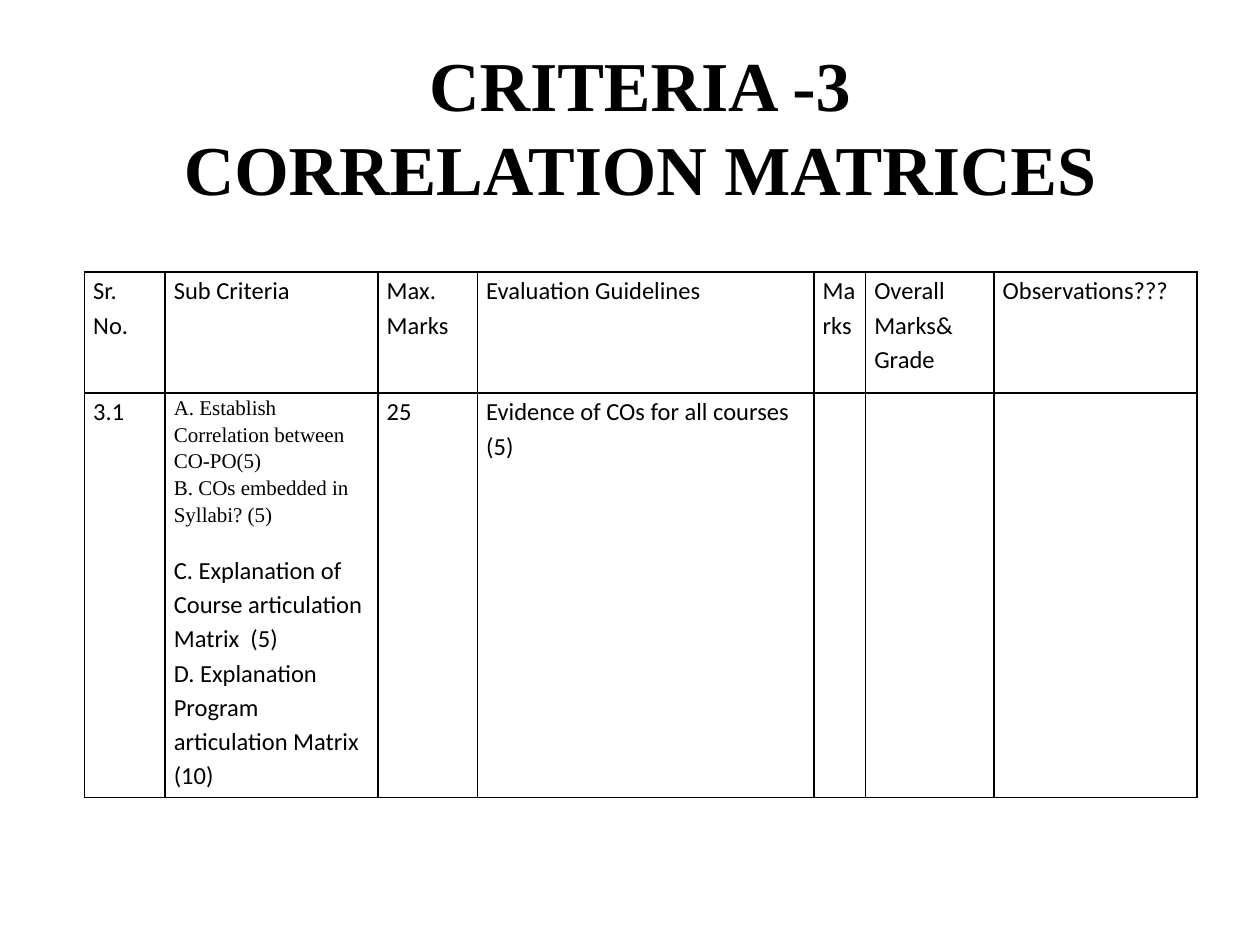
from lxml import etree
from pptx import Presentation
from pptx.dml.color import RGBColor as RGB
from pptx.enum.text import MSO_ANCHOR as Anchor, MSO_AUTO_SIZE as Fit, PP_ALIGN as Align
from pptx.oxml.ns import qn
from pptx.util import Inches, Pt

HUES = {"ink": "000000", "paper": "FFFFFF"}
SANS = {"name": "Calibri", "size": Pt(14)}
SERIF = {"name": "Times New Roman", "size": Pt(12)}
HEAD = {"name": "Times New Roman", "size": Pt(40), "bold": True}


def style(font, form):
    for key, val in form.items():
        setattr(font, key, val)
    font.color.rgb = RGB.from_string(HUES["ink"])


def frame(cell):
    """Draw a thin line on all four sides of a cell."""
    props = cell._tc.get_or_add_tcPr()
    for spot, side in enumerate(("lnL", "lnR", "lnT", "lnB")):
        line = etree.Element(qn(f"a:{side}"), w=str(Pt(1)))
        fill = etree.SubElement(line, qn("a:solidFill"))
        etree.SubElement(fill, qn("a:srgbClr"), val=HUES["ink"])
        props.insert(spot, line)


prs = Presentation()
prs.slide_width, prs.slide_height = Inches(10), Inches(7.5)
slide = prs.slides.add_slide(prs.slide_layouts[5])

# Title
title = slide.shapes.title
title.left, title.top = Inches(0.83), Inches(0.25)
title.width, title.height = Inches(8.5), Inches(1.49)
box = title.text_frame
box.word_wrap, box.auto_size = True, Fit.NONE
box.vertical_anchor = Anchor.MIDDLE
para = box.paragraphs[0]
para.alignment = Align.CENTER
for num, text in enumerate(("CRITERIA -3", "CORRELATION MATRICES")):
    if num:
        para.add_line_break()
    run = para.add_run()
    run.text = text
    style(run.font, HEAD)

# Criteria table: each cell is a list of (text, format, space before)
heads = ["Sr. No.", "Sub Criteria", "Max. Marks", "Evaluation Guidelines",
         "Marks", "Overall Marks& Grade", "Observations???"]
parts = [
    ("A. Establish Correlation between CO-PO(5)", SERIF, 0),
    ("B. COs embedded in Syllabi? (5)", SERIF, 0),
    ("C. Explanation of Course articulation Matrix  (5)", SANS, 14),
    ("D. Explanation  Program articulation Matrix (10)", SANS, 0),
]
rows = [
    [[(head, SANS, 0)] for head in heads],
    [[("3.1", SANS, 0)], parts, [("25", SANS, 0)],
     [("Evidence of COs for all courses (5)", SANS, 0)], [], [], []],
]
wides = [0.64, 1.69, 0.79, 2.67, 0.41, 1.02, 1.61]
highs = [0.96, 3.21]
table = slide.shapes.add_table(len(rows), len(wides), Inches(0.67), Inches(2.16),
                               Inches(sum(wides)), Inches(sum(highs))).table
table.first_row = table.horz_banding = False
for col, wide in zip(table.columns, wides):
    col.width = Inches(wide)
for row, high, cells in zip(table.rows, highs, rows):
    row.height = Inches(high)
    for cell, items in zip(row.cells, cells):
        cell.margin_left = cell.margin_right = Inches(0.07)
        cell.margin_top = cell.margin_bottom = 0
        cell.fill.solid()
        cell.fill.fore_color.rgb = RGB.from_string(HUES["paper"])
        frame(cell)
        body = cell.text_frame
        for num, (text, form, gap) in enumerate(items):
            para = body.add_paragraph() if num else body.paragraphs[0]
            para.line_spacing, para.space_before = 1.15, Pt(gap)
            run = para.add_run()
            run.text = text
            style(run.font, form)

prs.save("out.pptx")
